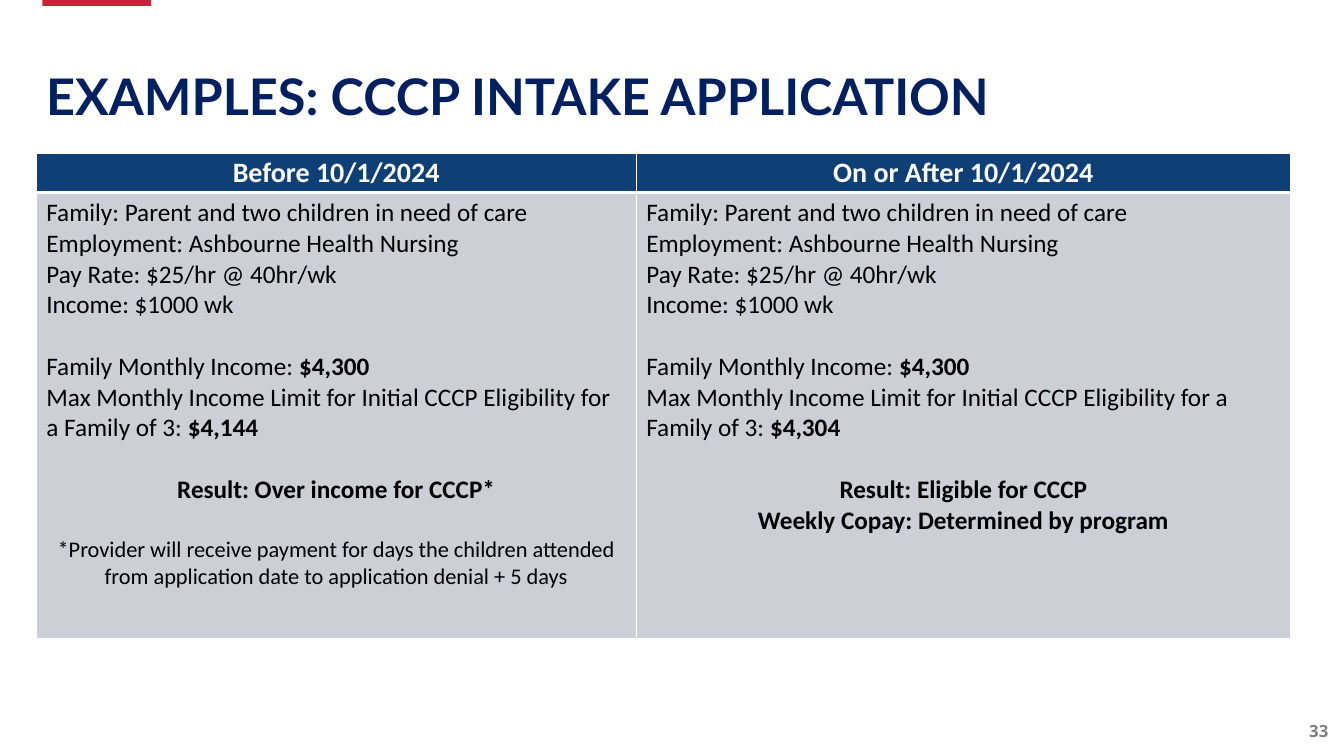
import pptx
import pptx.util
import pptx.dml.color
import pptx.enum.shapes
import pptx.enum.text
import pptx.oxml
import pptx.oxml.ns

Pt = pptx.util.Pt
Align = pptx.enum.text.PP_ALIGN
Anchor = pptx.enum.text.MSO_ANCHOR

COLORS = {
    "red": "C12637", "navy": "002060", "blue": "0E3F75", "gray": "808080",
    "pale": "CCCFD6", "white": "FFFFFF", "black": "000000",
}
GAP = 22  # points, one body line

FAMILY = [
    dict(text="Family: Parent and two children in need of care"),
    dict(text="Employment: Ashbourne Health Nursing"),
    dict(text="Pay Rate: $25/hr @ 40hr/wk"),
    dict(text="Income: $1000 wk"),
    dict(text="Family Monthly Income: ", value="$4,300", gap=GAP),
]
LIMIT = "Max Monthly Income Limit for Initial CCCP Eligibility for a Family of 3: "
RESULT = dict(bold=True, align=Align.CENTER)
CASES = [
    ("Before 10/1/2024", "$4,144", [
        dict(RESULT, text="Result: Over income for CCCP*", gap=GAP),
        dict(text="*Provider will receive payment for days the children attended "
                  "from application date to application denial + 5 days",
             size=16, align=Align.CENTER, gap=GAP),
    ]),
    ("On or After 10/1/2024", "$4,304", [
        dict(RESULT, text="Result: Eligible for CCCP", gap=GAP),
        dict(RESULT, text="Weekly Copay: Determined by program"),
    ]),
]


def paint(name):
    return pptx.dml.color.RGBColor.from_string(COLORS[name])


class Deck:
    """Places elements by percent of the slide's width and height."""

    def __init__(self):
        self.file = pptx.Presentation()
        self.file.slide_width = pptx.util.Inches(13.33)
        self.file.slide_height = pptx.util.Inches(7.5)
        self.page = self.file.slides.add_slide(self.file.slide_layouts[6])

    def wide(self, share):
        return round(self.file.slide_width * share / 100)

    def high(self, share):
        return round(self.file.slide_height * share / 100)

    def area(self, x, y, w, h):
        return self.wide(x), self.high(y), self.wide(w), self.high(h)

    def bar(self, box, color):
        kind = pptx.enum.shapes.MSO_SHAPE.RECTANGLE
        shape = self.page.shapes.add_shape(kind, *self.area(*box))
        shape.shadow.inherit = False
        shape.fill.solid()
        shape.fill.fore_color.rgb = paint(color)
        shape.line.fill.background()

    def line(self, para, text, value=None, size=18, face="Calibri",
             color="black", bold=False, align=Align.LEFT, gap=0, lead=None):
        """Fill a paragraph; a value follows the text in bold."""
        para.alignment = align
        if gap:
            para.space_before = Pt(gap)
        if lead:
            para.line_spacing = lead
        font = para.font
        font.name, font.size, font.color.rgb = face, Pt(size), paint(color)
        para.add_run().text = text
        if value:
            run = para.add_run()
            run.text, run.font.bold = value, True
        else:
            font.bold = bold

    def label(self, box, text, anchor, inset, **style):
        frame = self.page.shapes.add_textbox(*self.area(*box)).text_frame
        frame.word_wrap = True
        frame.vertical_anchor = anchor
        frame.margin_left = frame.margin_right = Pt(inset)
        self.line(frame.paragraphs[0], text, **style)

    def cell(self, cell, lines, fill, edges):
        """Fill a cell; edges gives border points: left, right, top, bottom."""
        cell.fill.solid()
        cell.fill.fore_color.rgb = paint(fill)
        props = cell._tc.get_or_add_tcPr()
        for spot, (side, width) in enumerate(zip("LRTB", edges)):
            props.insert(spot, pptx.oxml.parse_xml(
                f'<a:ln{side} {pptx.oxml.ns.nsdecls("a")} w="{Pt(width)}"><a:solidFill>'
                f'<a:srgbClr val="{COLORS["white"]}"/></a:solidFill></a:ln{side}>'))
        frame = cell.text_frame
        for spot, line in enumerate(lines):
            para = frame.add_paragraph() if spot else frame.paragraphs[0]
            self.line(para, **line)

    def table(self, x, y, cols, rows):
        box = self.area(x, y, sum(cols), sum(rows))
        grid = self.page.shapes.add_table(len(rows), len(cols), *box).table
        grid.horz_banding = False
        for col, share in zip(grid.columns, cols):
            col.width = self.wide(share)
        for row, share in zip(grid.rows, rows):
            row.height = self.high(share)
        return grid


def main():
    deck = Deck()
    deck.bar((3.15, 0, 8.1, 0.8), "red")
    deck.label((96.25, 93.33, 3.75, 6.67), "33", Anchor.MIDDLE, 0, size=12,
               face="Open Sans", color="gray", bold=True, align=Align.CENTER)
    deck.label((2.7, 7.33, 90.92, 12.93), "EXAMPLES: CCCP INTAKE APPLICATION",
               Anchor.TOP, 7.2, size=36, face="Lato", color="navy", bold=True,
               lead=Pt(46.5))

    grid = deck.table(2.7, 20.27, cols=(44.64, 48.69), rows=(5.2, 59.07))
    for col, (head, limit, result) in enumerate(CASES):
        top = grid.cell(0, col)
        top.margin_left = top.margin_right = Pt(5)
        top.margin_top = top.margin_bottom = 0
        title = dict(text=head, size=20, color="white", bold=True,
                     align=Align.CENTER, lead=1.07)
        deck.cell(top, [title], "blue", (1, 1, 1, 3))
        lines = FAMILY + [dict(text=LIMIT, value=limit)] + result
        deck.cell(grid.cell(1, col), lines, "pale", (1, 1, 3, 1))

    deck.file.save("out.pptx")


if __name__ == "__main__":
    main()
